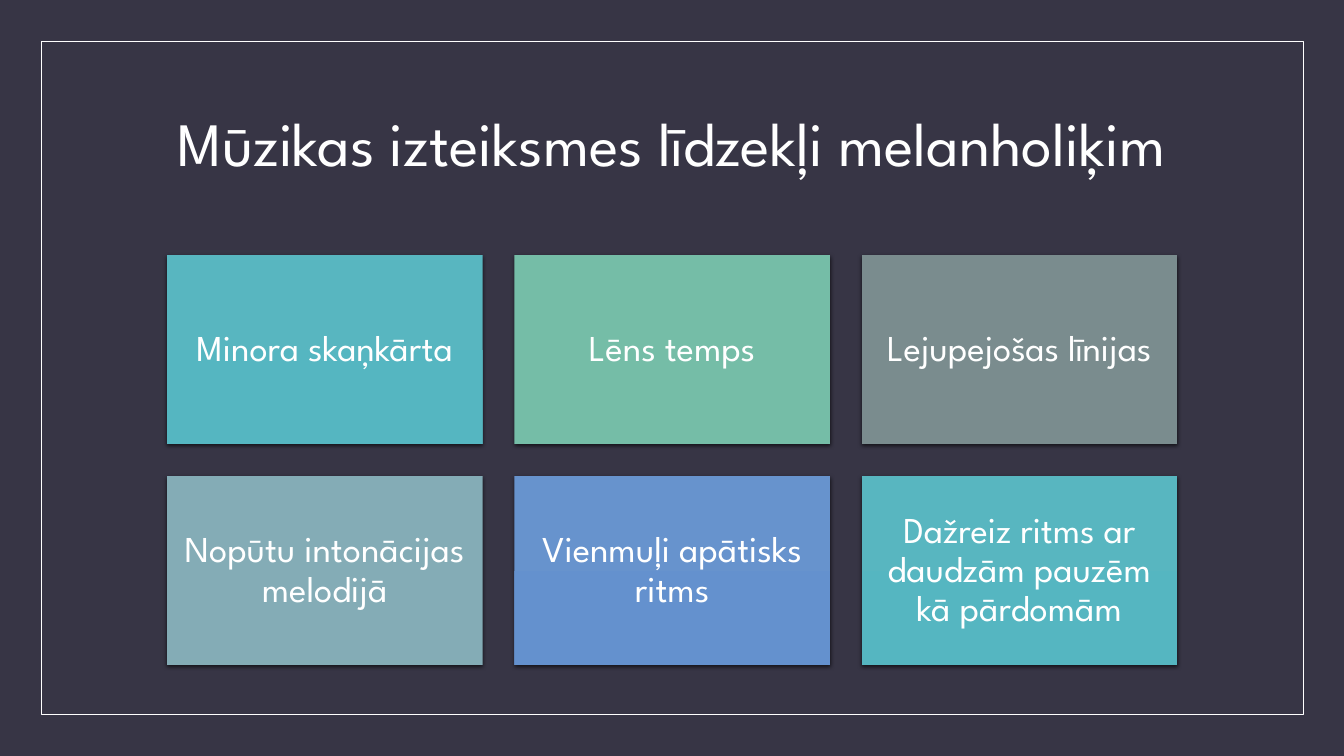
from lxml import etree
from pptx import Presentation
from pptx.dml.color import RGBColor
from pptx.enum.shapes import MSO_SHAPE
from pptx.enum.text import MSO_ANCHOR, MSO_AUTO_SIZE, PP_ALIGN
from pptx.oxml import parse_xml
from pptx.oxml.ns import nsdecls, qn
from pptx.util import Cm, Pt

FONT = "League Spartan"
BACKGROUND = RGBColor(0x37, 0x35, 0x45)
WHITE = RGBColor(0xFF, 0xFF, 0xFF)

# Top and bottom colour of each card's gradient
TEAL = RGBColor(0x58, 0xB6, 0xC0), RGBColor(0x55, 0xB6, 0xC1)
GREEN = RGBColor(0x75, 0xBD, 0xA7), RGBColor(0x72, 0xBD, 0xA6)
GREY = RGBColor(0x7A, 0x8C, 0x8E), RGBColor(0x78, 0x8B, 0x8D)
MIST = RGBColor(0x84, 0xAC, 0xB6), RGBColor(0x82, 0xAB, 0xB6)
BLUE = RGBColor(0x67, 0x93, 0xCD), RGBColor(0x64, 0x91, 0xCE)

TITLE = "Mūzikas izteiksmes līdzekļi melanholiķim"
FEATURES = [
    ("Minora skaņkārta", TEAL),
    ("Lēns temps", GREEN),
    ("Lejupejošas līnijas", GREY),
    ("Nopūtu intonācijas melodijā", MIST),
    ("Vienmuļi apātisks ritms", BLUE),
    ("Dažreiz ritms ar daudzām pauzēm kā pārdomām", TEAL),
]
COLUMNS = 3
GAP = Cm(0.8)


def write_text(shape, text, size, color=WHITE, inset=None):
    frame = shape.text_frame
    frame.word_wrap = True
    frame.auto_size = MSO_AUTO_SIZE.NONE
    frame.vertical_anchor = MSO_ANCHOR.MIDDLE
    if inset is not None:
        frame.margin_left = frame.margin_right = inset
        frame.margin_top = frame.margin_bottom = inset
    paragraph = frame.paragraphs[0]
    paragraph.alignment = PP_ALIGN.CENTER
    paragraph.line_spacing = 0.9
    run = paragraph.add_run()
    run.text = text
    run.font.name = FONT
    run.font.size = Pt(size)
    run.font.color.rgb = color


def add_soft_shadow(shape):
    shape.shadow.inherit = False
    effects = shape._element.spPr.find(qn("a:effectLst"))
    shadow = parse_xml(
        f'<a:outerShdw {nsdecls("a")} blurRad="38100" dist="12700" dir="5400000" '
        'algn="ctr" rotWithShape="0"/>')
    black = etree.SubElement(shadow, qn("a:srgbClr"), val="000000")
    etree.SubElement(black, qn("a:alpha"), val="63000")
    effects.append(shadow)


def add_frame(slide, left, top, width, height):
    border = slide.shapes.add_shape(MSO_SHAPE.RECTANGLE, left, top, width, height)
    border.shadow.inherit = False
    border.fill.background()
    border.line.color.rgb = WHITE
    border.line.width = Pt(0.5)


def place_title(slide, left, top, width, height):
    title = slide.shapes.title
    title.left, title.top, title.width, title.height = left, top, width, height
    write_text(title, TITLE, 44)


def add_card(slide, text, colors, left, top, width, height):
    card = slide.shapes.add_shape(MSO_SHAPE.RECTANGLE, left, top, width, height)
    card.fill.gradient()
    card.fill.gradient_angle = 270
    for stop, color in zip(card.fill.gradient_stops, colors):
        stop.color.rgb = color
    card.line.fill.background()
    add_soft_shadow(card)
    write_text(card, text, 26, inset=Cm(0.28))


def add_card_grid(slide, left, top, width, height):
    rows = len(FEATURES) // COLUMNS
    card_width = (width - GAP * (COLUMNS - 1)) // COLUMNS
    card_height = (height - GAP * (rows - 1)) // rows
    for index, (text, colors) in enumerate(FEATURES):
        row, column = divmod(index, COLUMNS)
        add_card(slide, text, colors,
                 left + column * (card_width + GAP),
                 top + row * (card_height + GAP),
                 card_width, card_height)


def main():
    deck = Presentation()
    deck.slide_width, deck.slide_height = Cm(33.87), Cm(19.05)
    slide = deck.slides.add_slide(deck.slide_layouts[5])
    slide.background.fill.solid()
    slide.background.fill.fore_color.rgb = BACKGROUND

    add_frame(slide, Cm(1.04), Cm(1.04), Cm(31.8), Cm(16.97))
    place_title(slide, Cm(2.97), Cm(1.78), Cm(27.94), Cm(3.81))
    add_card_grid(slide, Cm(4.21), Cm(6.43), Cm(25.46), Cm(10.34))
    deck.save("out.pptx")


if __name__ == "__main__":
    main()
